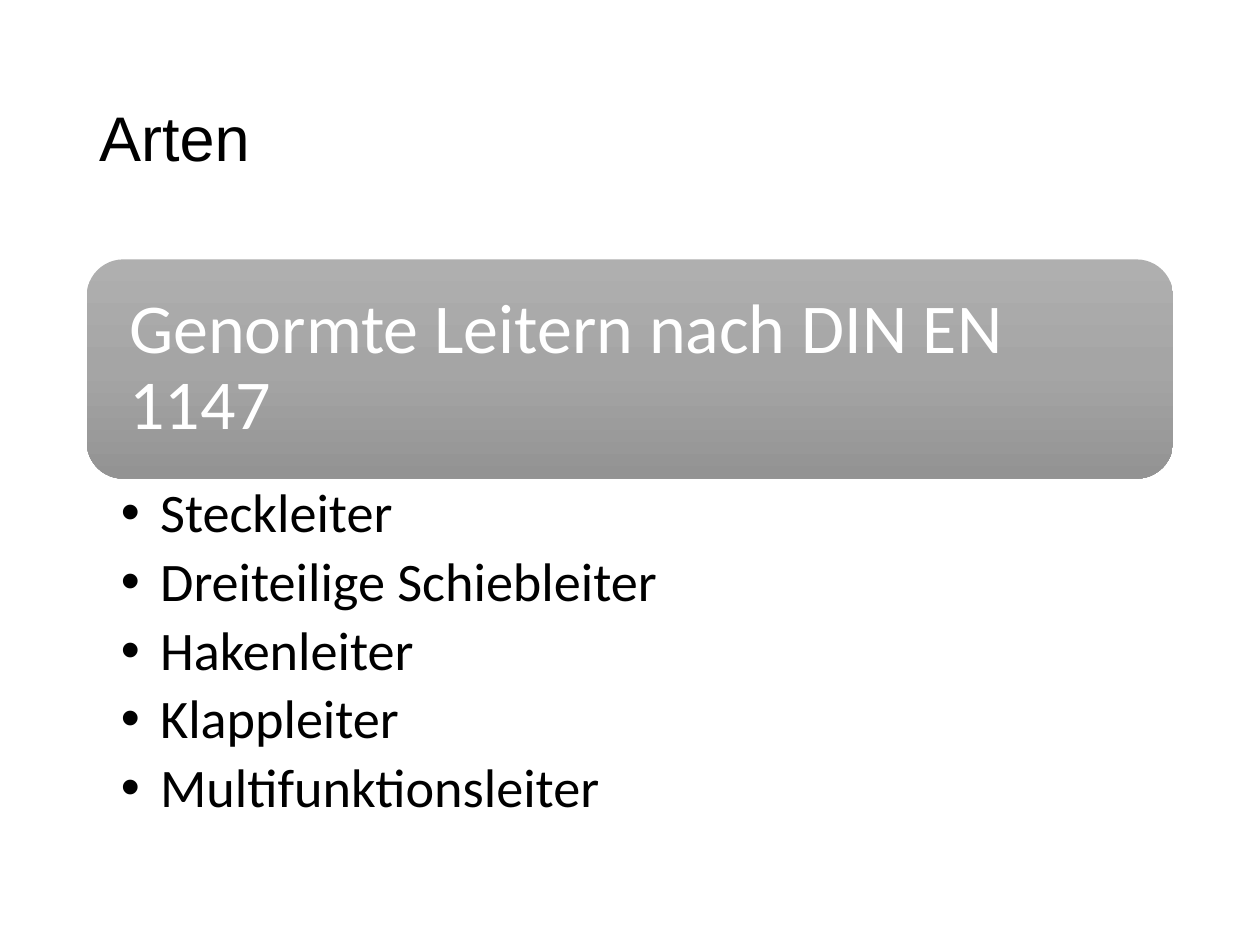
"""Build the slide listing the standardised ladder types."""
from copy import deepcopy

from lxml.etree import SubElement
from pptx import Presentation
from pptx.dml.color import RGBColor
from pptx.enum.shapes import MSO_SHAPE
from pptx.enum.text import MSO_ANCHOR as ANCHOR, PP_ALIGN as ALIGN
from pptx.oxml.ns import qn
from pptx.util import Cm, Pt

BLACK = RGBColor(0x00, 0x00, 0x00)
WHITE = RGBColor(0xFF, 0xFF, 0xFF)
GREYS = [RGBColor(0xAF, 0xAF, 0xAF), RGBColor(0xA5, 0xA5, 0xA5), RGBColor(0x93, 0x93, 0x93)]
LEFT, WIDTH = Cm(1.75), Cm(21.9)
LADDERS = ["Steckleiter", "Dreiteilige Schiebleiter", "Hakenleiter", "Klappleiter", "Multifunktionsleiter"]


def set_frame(tf, anchor, x, y):
    tf.word_wrap = True
    tf.vertical_anchor = anchor
    tf.margin_left = tf.margin_right = x
    tf.margin_top = tf.margin_bottom = y


def add_run(p, text, font, size, color):
    p.alignment = ALIGN.LEFT
    p.line_spacing = 0.9
    r = p.add_run()
    r.text = text
    r.font.name = font
    r.font.size = Pt(size)
    r.font.color.rgb = color


prs = Presentation()
prs.slide_width, prs.slide_height = Cm(25.4), Cm(19.05)
slide = prs.slides.add_slide(prs.slide_layouts[6])

tf = slide.shapes.add_textbox(LEFT, Cm(1.01), WIDTH, Cm(3.68)).text_frame
set_frame(tf, ANCHOR.MIDDLE, Cm(0.25), Cm(0.13))
add_run(tf.paragraphs[0], "Arten", "Arial", 36, BLACK)

s = slide.shapes.add_shape(MSO_SHAPE.ROUNDED_RECTANGLE, LEFT, Cm(5.23), WIDTH, Cm(4.42))
s.shadow.inherit = False
s.line.fill.background()
s.fill.gradient()
s.fill.gradient_angle = 270
stops = s._element.spPr.find(qn("a:gradFill")).find(qn("a:gsLst"))
stops.insert(1, deepcopy(stops[0]))
stops[1].set("pos", "50000")
for stop, grey in zip(s.fill.gradient_stops, GREYS):
    stop.color.rgb = grey
set_frame(s.text_frame, ANCHOR.MIDDLE, Cm(0.64), Cm(0.64))
add_run(s.text_frame.paragraphs[0], "Genormte Leitern nach DIN EN 1147", "Calibri", 40, WHITE)

tf = slide.shapes.add_textbox(LEFT, Cm(9.65), WIDTH, Cm(7.37)).text_frame
set_frame(tf, ANCHOR.TOP, Cm(0.69), Cm(0.15))
for i, ladder in enumerate(LADDERS):
    p = tf.add_paragraph() if i else tf.paragraphs[0]
    p.space_after = Pt(5.7)
    add_run(p, ladder, "Calibri", 31, BLACK)
    pPr = p._p.get_or_add_pPr()
    pPr.set("marL", str(Cm(0.79)))
    pPr.set("indent", str(-Cm(0.79)))
    SubElement(pPr, qn("a:buFont")).set("typeface", "Arial")
    SubElement(pPr, qn("a:buChar")).set("char", "•")

prs.save("out.pptx")
